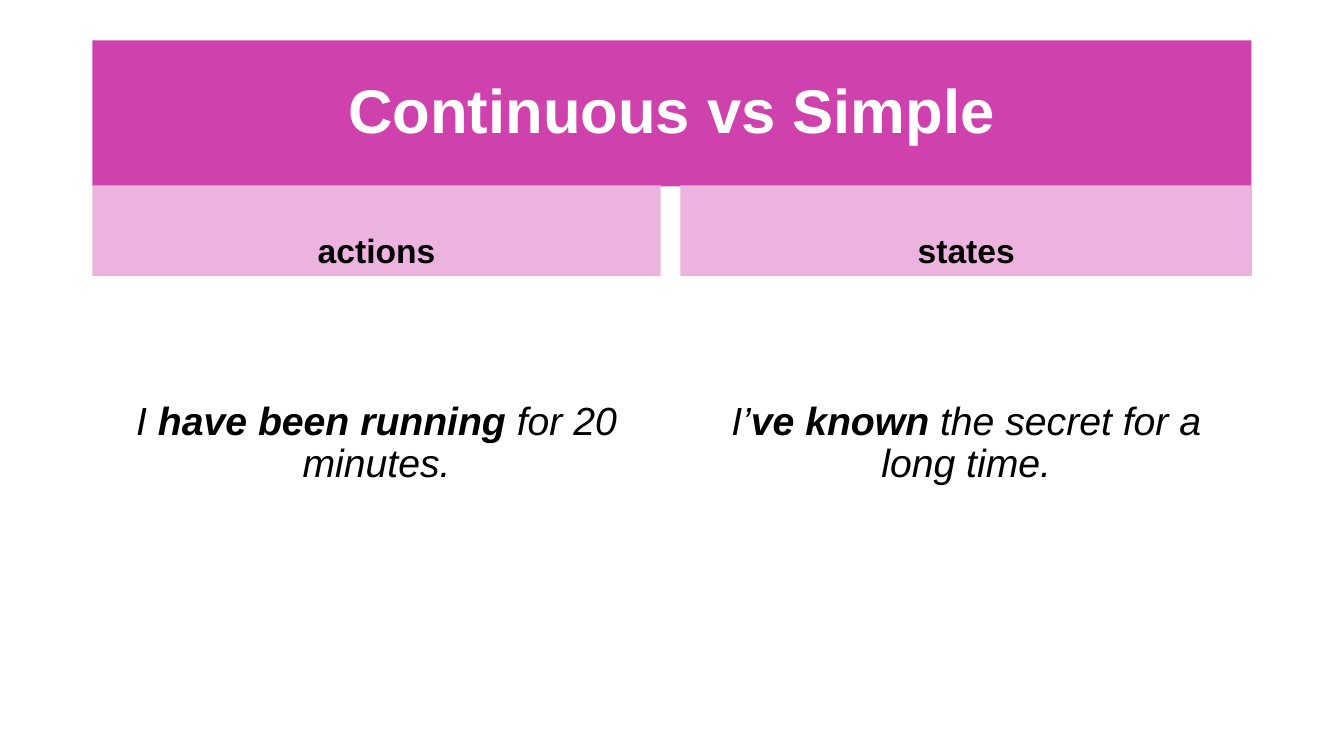
import pptx
import pptx.util
import pptx.dml.color
import pptx.enum.shapes
import pptx.enum.text

Cm = pptx.util.Cm
Pt = pptx.util.Pt
RGBColor = pptx.dml.color.RGBColor
ANCHOR = pptx.enum.text.MSO_ANCHOR

MAGENTA = RGBColor(0xCF, 0x41, 0xAD)
PINK = RGBColor(0xEC, 0xB3, 0xDE)
WHITE = RGBColor(0xFF, 0xFF, 0xFF)
BLACK = RGBColor(0x00, 0x00, 0x00)

LEFT = 2.33
TITLE_TOP = 1.02
HEADING_TOP = 4.67
HEADING_HEIGHT = 2.29

deck = pptx.Presentation()
deck.slide_width = Cm(33.87)
deck.slide_height = Cm(19.05)
page = deck.slides.add_slide(deck.slide_layouts[6])


def style_text(box, size, color, anchor):
    frame = box.text_frame
    frame.word_wrap = True
    frame.vertical_anchor = anchor
    para = frame.paragraphs[0]
    para.alignment = pptx.enum.text.PP_ALIGN.CENTER
    para.line_spacing = 0.9
    para.font.name = "Arial"
    para.font.size = Pt(size)
    para.font.color.rgb = color
    return para


def add_band(left, top, width, height, fill, text, size, color, anchor):
    band = page.shapes.add_shape(
        pptx.enum.shapes.MSO_SHAPE.RECTANGLE, Cm(left), Cm(top), Cm(width), Cm(height))
    band.shadow.inherit = False
    band.fill.solid()
    band.fill.fore_color.rgb = fill
    band.line.fill.background()
    para = style_text(band, size, color, anchor)
    para.add_run().text = text
    para.font.bold = True


add_band(LEFT, TITLE_TOP, 29.21, 3.68, MAGENTA,
         "Continuous vs Simple", 44, WHITE, ANCHOR.MIDDLE)

columns = [
    (LEFT, 14.32, "actions", ("I ", "have been running ", "for 20 minutes.")),
    (17.15, 14.4, "states", ("I’", "ve known ", "the secret for a long time.")),
]
for left, width, heading, (subject, verb, ending) in columns:
    add_band(left, HEADING_TOP, width, HEADING_HEIGHT, PINK,
             heading, 24, BLACK, ANCHOR.BOTTOM)
    example = page.shapes.add_textbox(
        Cm(left), Cm(HEADING_TOP + HEADING_HEIGHT), Cm(width), Cm(10.24))
    example.text_frame.margin_top = Cm(3.15)
    para = style_text(example, 28, BLACK, ANCHOR.TOP)
    para.font.italic = True
    for text, bold in ((subject, False), (verb, True), (ending, False)):
        span = para.add_run()
        span.text = text
        span.font.bold = bold

deck.save("out.pptx")
